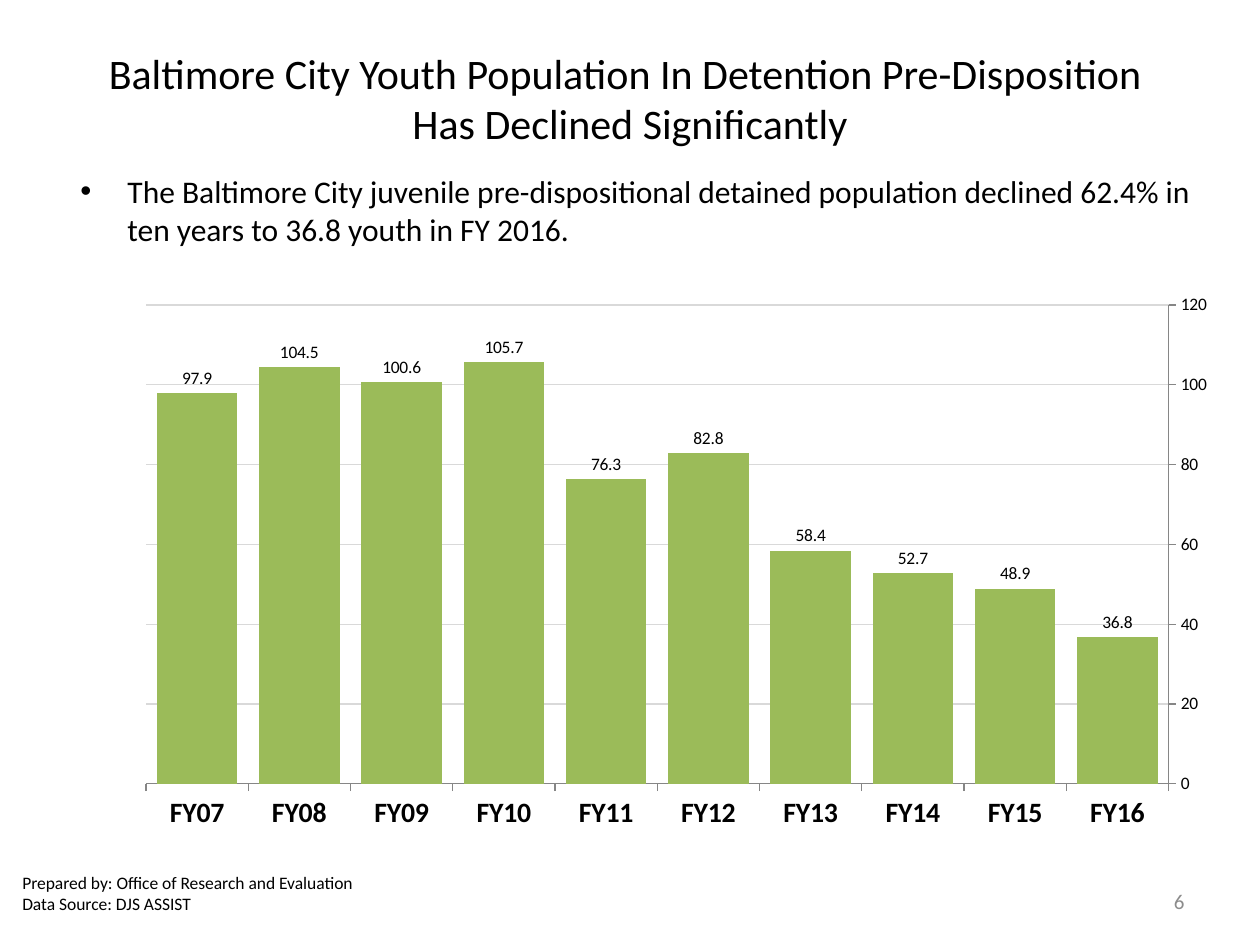
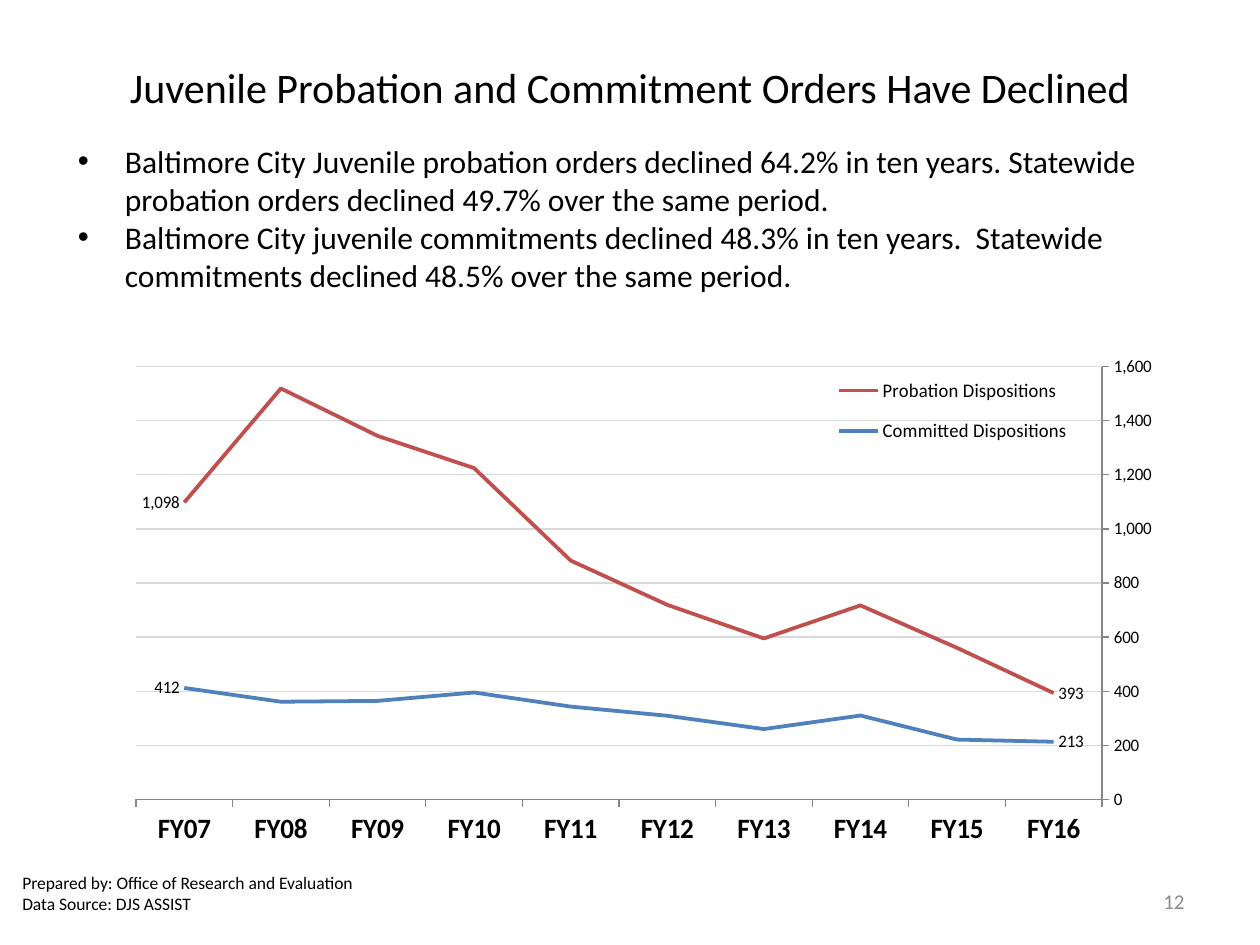
from lxml import etree
from pptx import Presentation
from pptx import util as u
from pptx.chart.data import CategoryChartData
from pptx.dml.color import RGBColor
from pptx.enum import chart as ch
from pptx.enum import text
from pptx.oxml.ns import qn

FONT = "Calibri"
BLACK, GREY, GRID, AXIS = "000000", "8C8C8C", "D9D9D9", "868686"
GREEN, RED, BLUE = "9BBB59", "C0504D", "4F81BD"
YEARS = [f"FY{y:02d}" for y in range(16, 6, -1)]
NUMBER_BOX = (18.21, 17.65, 5.92, 1.02)
SOURCE_BOX = (0.2, 17.35, 7.42, 1.32)
SOURCE_LINES = ["Prepared by: Office of Research and Evaluation", "Data Source: DJS ASSIST"]


def rgb(value):
    return RGBColor.from_string(value)


def cm(box):
    return [u.Cm(v) for v in box]


def set_font(font, size, color=BLACK, bold=False):
    font.name, font.size, font.bold = FONT, u.Pt(size), bold
    font.color.rgb = rgb(color)


def add_title(s, box, title):
    sp = s.shapes.title
    sp.left, sp.top, sp.width, sp.height = cm(box)
    tf = sp.text_frame
    tf.text = title
    tf.vertical_anchor = text.MSO_ANCHOR.MIDDLE
    p = tf.paragraphs[0]
    p.alignment = text.PP_ALIGN.CENTER
    set_font(p.font, 24)


def add_text(s, box, lines, size, color=BLACK, align=text.PP_ALIGN.LEFT):
    tf = s.shapes.add_textbox(*cm(box)).text_frame
    tf.word_wrap = True
    tf.vertical_anchor = text.MSO_ANCHOR.MIDDLE
    tf.text = "\n".join(lines)
    for p in tf.paragraphs:
        p.alignment = align
        set_font(p.font, size, color)
    return tf


def add_bullets(s, box, lines):
    for p in add_text(s, box, lines, 18).paragraphs:
        ppr = p._p.get_or_add_pPr()
        indent = u.Cm(0.95)
        ppr.set("marL", str(indent))
        ppr.set("indent", str(-indent))
        bullet_font = etree.Element(qn("a:buFont"), typeface="Arial")
        bullet = etree.Element(qn("a:buChar"), char="•")
        ppr.insert_element_before(bullet_font, "a:tabLst", "a:defRPr", "a:extLst")
        ppr.insert_element_before(bullet, "a:tabLst", "a:defRPr", "a:extLst")


def add_footer(s, number):
    add_text(s, SOURCE_BOX, SOURCE_LINES, 10)
    add_text(s, NUMBER_BOX, [str(number)], 12, GREY, text.PP_ALIGN.RIGHT)


def set_layout(parent, index, box, inner=False):
    for old in parent.findall(qn("c:layout")):
        parent.remove(old)
    layout = etree.Element(qn("c:layout"))
    manual = etree.SubElement(layout, qn("c:manualLayout"))
    settings = [("layoutTarget", "inner")] if inner else []
    settings += [("xMode", "edge"), ("yMode", "edge"), *zip("xywh", box)]
    for name, value in settings:
        etree.SubElement(manual, qn(f"c:{name}"), val=str(value))
    parent.insert(index, layout)


def add_year_chart(s, box, kind, series, data_format, axis_format, top, step, plot_box):
    data = CategoryChartData(number_format=data_format)
    data.categories = YEARS
    for name, values in series:
        data.add_series(name, values)
    chart = s.shapes.add_chart(kind, *cm(box), data).chart
    chart.has_title = False
    chart.has_legend = False
    set_font(chart.font, 10)
    chart.plots[0].vary_by_categories = False
    years, values = chart.category_axis, chart.value_axis
    years.reverse_order = True
    years.crosses = ch.XL_AXIS_CROSSES.MAXIMUM
    set_font(years.tick_labels.font, 16, bold=True)
    values.minimum_scale, values.maximum_scale, values.major_unit = 0, top, step
    values.tick_labels.number_format = axis_format
    values.tick_labels.number_format_is_linked = False
    values.has_major_gridlines = True
    for axis in (years, values):
        axis.major_tick_mark = ch.XL_TICK_MARK.OUTSIDE
        axis.minor_tick_mark = ch.XL_TICK_MARK.NONE
    for line, color in ((years.format.line, AXIS), (values.format.line, AXIS),
                        (values.major_gridlines.format.line, GRID)):
        line.color.rgb = rgb(color)
        line.width = u.Pt(0.75)
    set_layout(chart.element.find(".//" + qn("c:plotArea")), 0, plot_box, inner=True)
    return chart


def add_detention_chart(s, box):
    population = [36.8, 48.9, 52.7, 58.4, 82.8, 76.3, 105.7, 100.6, 104.5, 97.9]
    chart = add_year_chart(s, box, ch.XL_CHART_TYPE.COLUMN_CLUSTERED,
                           [("Series 1", population)], "0.0", "0", 120, 20,
                           (0.073, 0.055, 0.9, 0.83))
    plot = chart.plots[0]
    plot.gap_width = 27
    fill = plot.series[0].format.fill
    fill.solid()
    fill.fore_color.rgb = rgb(GREEN)
    labels = plot.series[0].data_labels
    labels.show_value = True
    labels.position = ch.XL_LABEL_POSITION.OUTSIDE_END
    labels.number_format = "0.0"
    labels.number_format_is_linked = False
    set_font(labels.font, 10)


def add_orders_chart(s, box):
    probation = [393, 560, 717, 595, 719, 883, 1225, 1344, 1519, 1098]
    committed = [213, 221, 310, 260, 309, 343, 395, 364, 361, 412]
    chart = add_year_chart(s, box, ch.XL_CHART_TYPE.LINE,
                           [("Probation Dispositions", probation),
                            ("Committed Dispositions", committed)],
                           "#,##0", r"#,##0_);\(#,##0\)", 1600, 200,
                           (0.05, 0.078, 0.934, 0.808))
    ends = {0: ch.XL_LABEL_POSITION.RIGHT, len(YEARS) - 1: ch.XL_LABEL_POSITION.LEFT}
    for series, color in zip(chart.plots[0].series, (RED, BLUE)):
        series.smooth = False
        series.marker.style = ch.XL_MARKER_STYLE.NONE
        series.format.line.color.rgb = rgb(color)
        series.format.line.width = u.Pt(2.25)
        series.data_labels.show_value = False
        for index, position in ends.items():
            series.points[index].data_label.position = position
    chart.has_legend = True
    chart.legend.position = ch.XL_LEGEND_POSITION.RIGHT
    chart.legend.include_in_layout = True
    set_font(chart.legend.font, 11)
    set_layout(chart.element.find(".//" + qn("c:legend")), 1, (0.71, 0.07, 0.26, 0.18))


def add_report_slide(prs, number, title, title_box, bullets, bullet_box, draw_chart, chart_box):
    s = prs.slides.add_slide(prs.slide_layouts[5])
    add_title(s, title_box, title)
    add_bullets(s, bullet_box, bullets)
    draw_chart(s, chart_box)
    add_footer(s, number)


def main():
    prs = Presentation()
    prs.slide_width, prs.slide_height = u.Cm(25.4), u.Cm(19.05)
    add_report_slide(
        prs, 6,
        "Baltimore City Youth Population In Detention Pre-Disposition \vHas Declined Significantly",
        (1.27, 0.76, 22.86, 2.41),
        ["The Baltimore City juvenile pre-dispositional detained population declined 62.4% in "
         "ten years to 36.8 youth in FY 2016."],
        (1.37, 2.74, 23.6, 2.97),
        add_detention_chart, (1.27, 5.51, 23.06, 11.63))
    add_report_slide(
        prs, 12,
        "Juvenile Probation and Commitment Orders Have Declined",
        (0, 0.76, 25.4, 1.98),
        ["Baltimore City Juvenile probation orders declined 64.2% in ten years. Statewide "
         "probation orders declined 49.7% over the same period.",
         "Baltimore City juvenile commitments declined 48.3% in ten years.  Statewide "
         "commitments declined 48.5% over the same period."],
        (1.32, 2.97, 23.06, 2.84),
        add_orders_chart, (1.7, 6.55, 21.59, 10.8))
    prs.save("out.pptx")


if __name__ == "__main__":
    main()
